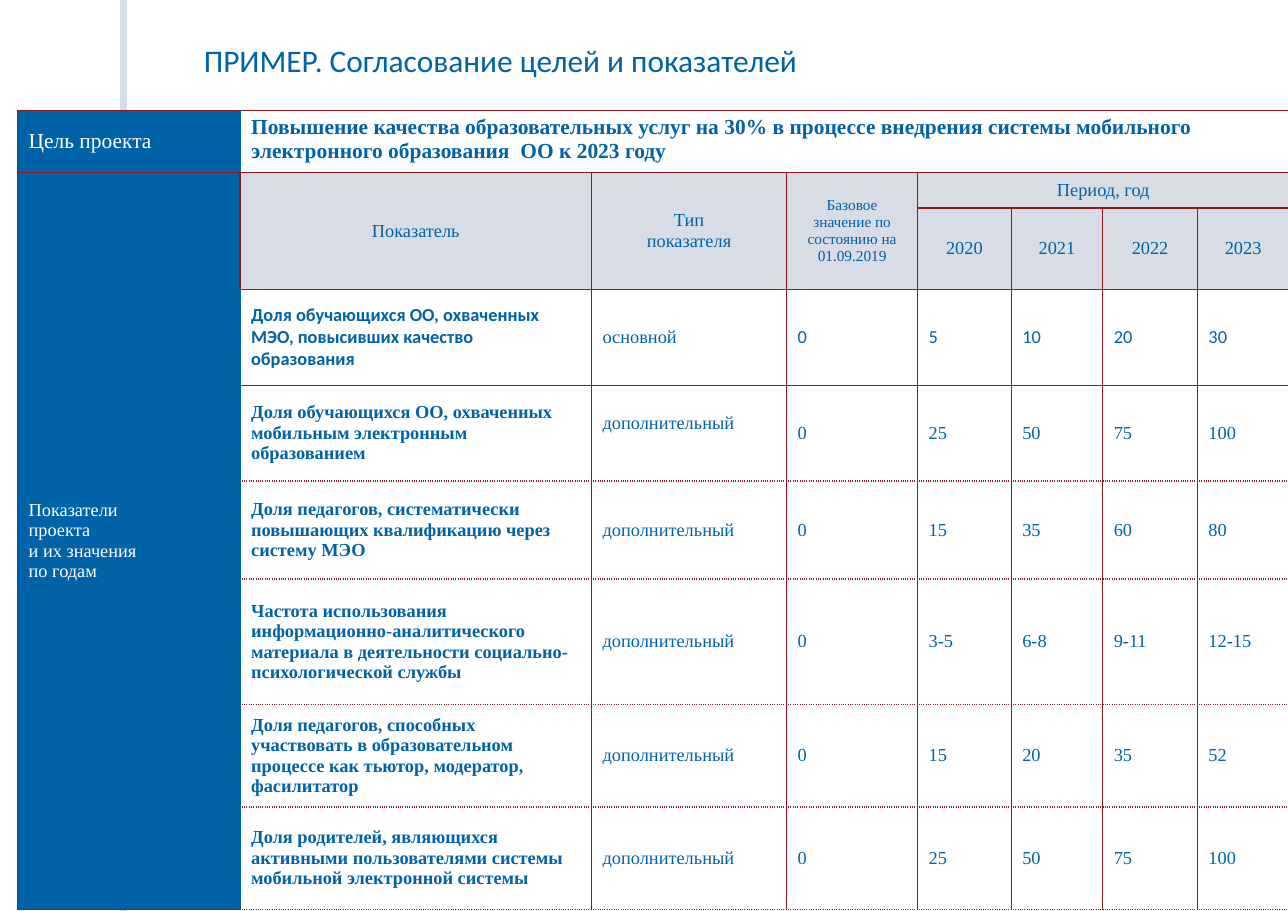
from pptx import Presentation
from pptx import util as u
from pptx.dml.color import RGBColor
from pptx.enum import shapes as sh, text as tx
from pptx.oxml import parse_xml
from pptx.oxml.ns import nsdecls

BLUE = RGBColor(0x00, 0x62, 0xA7)
RED = RGBColor(0x92, 0x1A, 0x1D)
GREY = RGBColor(0xD8, 0xDC, 0xE5)
WHITE = RGBColor(0xFF, 0xFF, 0xFF)
SERIF, SANS = "Times New Roman", "Calibri"

COLS = [2.02, 3.19, 1.77, 1.19, 0.85, 0.83, 0.86, 0.83]
ROWS = [0.53, 0.32, 0.74, 0.87, 0.87, 0.89, 1.14, 0.93, 0.93]

GOAL = ("Повышение качества образовательных услуг на 30% в процессе внедрения "
        "системы мобильного электронного образования  ОО к 2023 году")
SIDE = "Показатели\nпроекта\nи их значения\nпо годам"
HEADS = ["Показатель", "Тип\nпоказателя",
         "Базовое\nзначение по состоянию на 01.09.2019", "Период, год"]
YEARS = ["2020", "2021", "2022", "2023"]
MORE = "дополнительный"
DATA = [
    ["Доля обучающихся ОО, охваченных МЭО, повысивших качество образования",
     "основной", "0", "5", "10", "20", "30"],
    ["Доля обучающихся ОО, охваченных мобильным электронным образованием",
     MORE, "0", "25", "50", "75", "100"],
    ["Доля педагогов, систематически повышающих квалификацию через систему МЭО",
     MORE, "0", "15", "35", "60", "80"],
    ["Частота использования информационно-аналитического материала "
     "в деятельности социально-психологической службы",
     MORE, "0", "3-5", "6-8", "9-11", "12-15"],
    ["Доля педагогов, способных участвовать в образовательном процессе "
     "как тьютор, модератор, фасилитатор",
     MORE, "0", "15", "20", "35", "52"],
    ["Доля родителей, являющихся активными пользователями системы "
     "мобильной электронной системы",
     MORE, "0", "25", "50", "75", "100"],
]


def style(para, size, color, name=SERIF, bold=False, align=tx.PP_ALIGN.LEFT):
    para.alignment = align
    font = para.font
    font.size, font.name, font.bold = u.Pt(size), name, bold
    font.color.rgb = color


def write(cell, words, size=12, color=BLUE, **look):
    cell.text_frame.text = words
    cell.vertical_anchor = tx.MSO_ANCHOR.MIDDLE
    for para in cell.text_frame.paragraphs:
        style(para, size, color, **look)


def edge(cell, side, color, dash="solid"):
    cell._tc.get_or_add_tcPr().append(parse_xml(
        f'<a:ln{side} {nsdecls("a")} w="12700"><a:solidFill>'
        f'<a:srgbClr val="{color}"/></a:solidFill>'
        f'<a:prstDash val="{dash}"/></a:ln{side}>'))


def frame(cell, row, col):
    """Borders and fill follow from the place in the grid."""
    dots = col > 0
    edge(cell, "L", BLUE if col == 1 and row not in (1, 2) else RED)
    edge(cell, "R", BLUE if (row, col) == (0, 0) else RED)
    edge(cell, "T", RED, "sysDot" if dots and row > 4 else "solid")
    edge(cell, "B", RED, "sysDot" if dots and row > 3 else "solid")
    cell.fill.solid()
    cell.fill.fore_color.rgb = (
        BLUE if col == 0 else GREY if row in (1, 2) else WHITE)


def rule(slide):
    line = slide.shapes.add_connector(
        sh.MSO_CONNECTOR.STRAIGHT,
        u.Inches(1.12), u.Inches(8.27), u.Inches(1.12), u.Inches(0))
    line.line.color.rgb = GREY
    line.line.width = u.Pt(4.5)
    line._element.spPr.append(parse_xml(f'<a:effectLst {nsdecls("a")}/>'))


def title(slide):
    box = slide.shapes.title
    box.left, box.top = u.Inches(1.75), u.Inches(0.32)
    box.width, box.height = u.Inches(6.89), u.Inches(0.45)
    body = box.text_frame
    body.text = "ПРИМЕР. Согласование целей и показателей"
    body.vertical_anchor = tx.MSO_ANCHOR.MIDDLE
    body.auto_size = tx.MSO_AUTO_SIZE.SHAPE_TO_FIT_TEXT
    style(body.paragraphs[0], 20.5, BLUE, SANS)


def grid(slide):
    table = slide.shapes.add_table(
        len(ROWS), len(COLS), u.Inches(0.16), u.Inches(1),
        u.Inches(sum(COLS)), u.Inches(sum(ROWS))).table
    table.first_row = table.horz_banding = False
    for col, width in zip(table.columns, COLS):
        col.width = u.Inches(width)
    for row, height in zip(table.rows, ROWS):
        row.height = u.Inches(height)
    for row in range(len(ROWS)):
        for col in range(len(COLS)):
            frame(table.cell(row, col), row, col)
    return table


def heads(table):
    cell = table.cell
    # Goal and side label
    cell(0, 1).merge(cell(0, 7))
    cell(1, 0).merge(cell(8, 0))
    write(cell(0, 0), "Цель проекта", 14, WHITE)
    write(cell(0, 1), GOAL, 14, bold=True)
    cell(0, 1).vertical_anchor = tx.MSO_ANCHOR.TOP
    write(cell(1, 0), SIDE, color=WHITE)

    # Column heads
    mid = tx.PP_ALIGN.CENTER
    for col in (1, 2, 3):
        cell(1, col).merge(cell(2, col))
    cell(1, 4).merge(cell(1, 7))
    for col, words in enumerate(HEADS, 1):
        write(cell(1, col), words, 10 if col == 3 else 12, align=mid)
    for col, year in enumerate(YEARS, 4):
        write(cell(2, col), year, align=mid)


def fill(table):
    for row, items in enumerate(DATA, 3):
        for col, words in enumerate(items, 1):
            name = SANS if row == 3 and col != 2 else SERIF
            write(table.cell(row, col), words, name=name, bold=col == 1)
    # The first extra measure sits a little higher
    table.cell(4, 2).margin_bottom = u.Inches(0.23)


def main():
    deck = Presentation()
    deck.slide_width, deck.slide_height = u.Inches(11.69), u.Inches(8.27)
    slide = deck.slides.add_slide(deck.slide_layouts[5])
    rule(slide)
    title(slide)
    table = grid(slide)
    heads(table)
    fill(table)
    deck.save("out.pptx")


if __name__ == "__main__":
    main()
